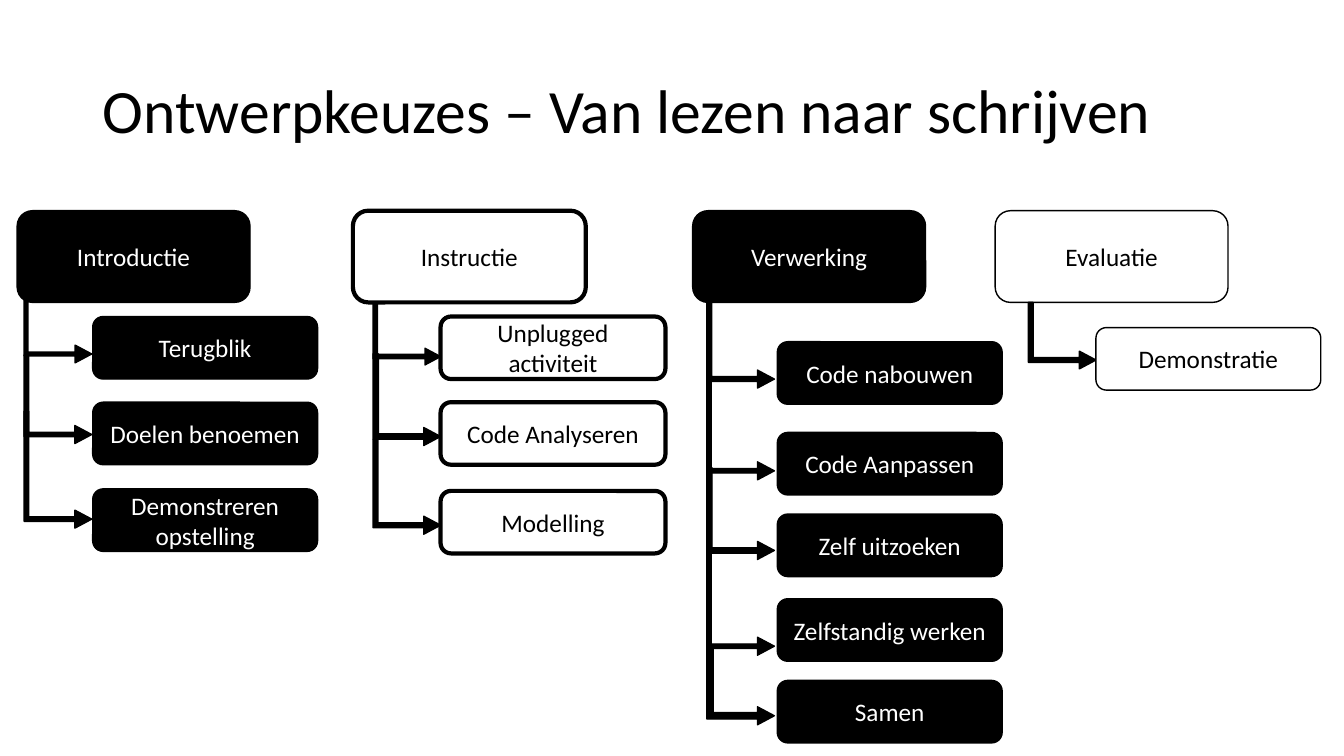
from dataclasses import dataclass

import pptx
import pptx.dml.color
import pptx.enum.shapes
import pptx.enum.text
import pptx.util

Inches = pptx.util.Inches
Pt = pptx.util.Pt
Shapes = pptx.enum.shapes.MSO_SHAPE
Anchor = pptx.enum.text.MSO_ANCHOR
Align = pptx.enum.text.PP_ALIGN


@dataclass(frozen=True)
class Theme:
    black: str = "000000"
    white: str = "FFFFFF"
    font: str = "Calibri"
    title_size: int = 44
    box_size: int = 18
    thin: int = 1
    thick: int = 3


@dataclass(frozen=True)
class Step:
    label: str
    top: float
    arrow_top: float
    arrow_length: float
    stem: float


@dataclass(frozen=True)
class Phase:
    label: str
    left: float
    step_left: float
    arrow_left: float
    fill: str
    text: str
    line: int
    steps: tuple


class SlideBuilder:
    HEADER_TOP = 2.09
    HEADER_SIZE = (2.31, 0.91)
    STEP_SIZE = (2.23, 0.62)
    ARROW_REACH = 0.67

    def __init__(self, slide, theme):
        self.slide = slide
        self.theme = theme

    def style_text(self, paragraph, size, color):
        paragraph.font.name = self.theme.font
        paragraph.font.size = Pt(size)
        paragraph.font.color.rgb = pptx.dml.color.RGBColor.from_string(color)

    def title(self, text, left, top, width, height):
        shape = self.slide.shapes.add_textbox(
            Inches(left), Inches(top), Inches(width), Inches(height))
        frame = shape.text_frame
        frame.word_wrap = True
        frame.vertical_anchor = Anchor.MIDDLE
        paragraph = frame.paragraphs[0]
        paragraph.text = text
        paragraph.line_spacing = 0.9
        self.style_text(paragraph, self.theme.title_size, self.theme.black)

    def shape(self, kind, left, top, width, height, fill, line):
        shape = self.slide.shapes.add_shape(
            kind, Inches(left), Inches(top), Inches(width), Inches(height))
        shape.shadow.inherit = False
        shape.fill.solid()
        shape.fill.fore_color.rgb = pptx.dml.color.RGBColor.from_string(fill)
        shape.line.color.rgb = pptx.dml.color.RGBColor.from_string(self.theme.black)
        shape.line.width = Pt(line)
        return shape

    def box(self, label, left, top, size, phase):
        shape = self.shape(
            Shapes.ROUNDED_RECTANGLE, left, top, *size, phase.fill, phase.line)
        frame = shape.text_frame
        frame.word_wrap = True
        frame.vertical_anchor = Anchor.MIDDLE
        paragraph = frame.paragraphs[0]
        paragraph.text = label
        paragraph.alignment = Align.CENTER
        self.style_text(paragraph, self.theme.box_size, phase.text)

    def arrow(self, left, top, length, stem):
        shift = (length - self.ARROW_REACH) / 2
        shape = self.shape(
            Shapes.BENT_UP_ARROW, left - shift, top + shift, length,
            self.ARROW_REACH, self.theme.black, self.theme.thin)
        shape.rotation = 90
        for index, value in enumerate((stem, 0.133, 0.25)):
            shape.adjustments[index] = value

    def phase(self, phase):
        self.box(phase.label, phase.left, self.HEADER_TOP, self.HEADER_SIZE, phase)
        for step in phase.steps:
            self.arrow(phase.arrow_left, step.arrow_top, step.arrow_length, step.stem)
            self.box(step.label, phase.step_left, step.top, self.STEP_SIZE, phase)


def main():
    theme = Theme()
    dark = (theme.black, theme.white, theme.thin)
    outlined = (theme.white, theme.black, theme.thick)
    light = (theme.white, theme.black, theme.thin)
    phases = (
        Phase("Introductie", 0.17, 0.92, 0.24, *dark, (
            Step("Terugblik", 3.14, 2.94, 0.66, 0.055),
            Step("Doelen benoemen", 3.99, 3.52, 0.88, 0.065),
            Step("Demonstreren opstelling", 4.85, 4.08, 1.16, 0.067))),
        Phase("Instructie", 3.5, 4.37, 3.7, *outlined, (
            Step("Unplugged activiteit", 3.14, 3.0, 0.62, 0.071),
            Step("Code Analyseren", 3.99, 3.51, 0.91, 0.078),
            Step("Modelling", 4.87, 4.36, 0.94, 0.071))),
        Phase("Verwerking", 6.87, 7.71, 7.01, *dark, (
            Step("Code nabouwen", 3.39, 2.94, 0.91, 0.071),
            Step("Code Aanpassen", 4.29, 3.74, 1.02, 0.066),
            Step("Zelf uitzoeken", 5.1, 4.64, 0.91, 0.078),
            Step("Zelfstandig werken", 5.94, 5.48, 1.02, 0.066),
            Step("Samen", 6.75, 6.4, 0.79, 0.096))),
        Phase("Evaluatie", 9.87, 10.87, 10.2, *light, (
            Step("Demonstratie", 3.25, 3.0, 0.66, 0.071),)),
    )

    presentation = pptx.Presentation()
    presentation.slide_width = Inches(13.33)
    presentation.slide_height = Inches(7.5)
    slide = presentation.slides.add_slide(presentation.slide_layouts[6])
    builder = SlideBuilder(slide, theme)
    builder.title("Ontwerpkeuzes – Van lezen naar schrijven", 0.92, 0.4, 11.5, 1.45)
    for phase in phases:
        builder.phase(phase)
    presentation.save("out.pptx")


if __name__ == "__main__":
    main()
